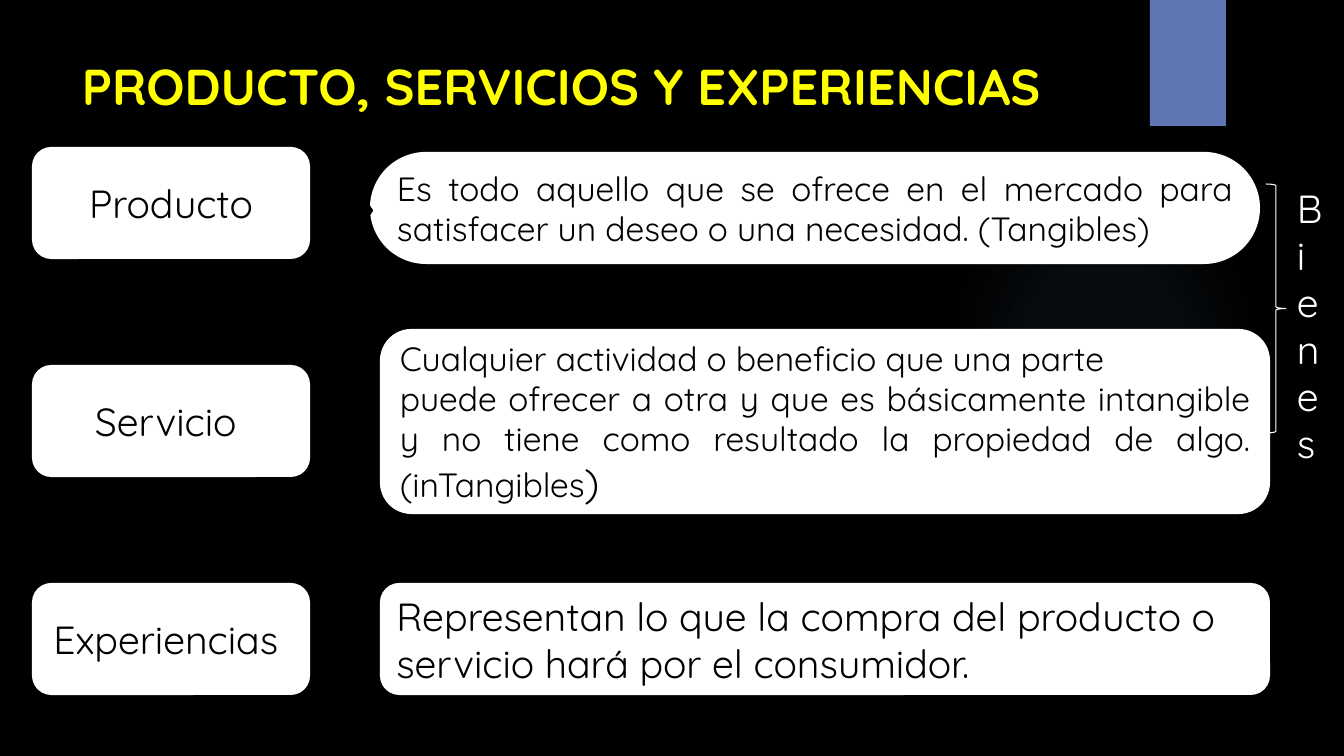
from lxml import etree
from pptx import Presentation
from pptx.dml.color import RGBColor
from pptx.enum.shapes import MSO_SHAPE as SHAPE
from pptx.enum.text import MSO_ANCHOR as ANCHOR, PP_ALIGN as ALIGN
from pptx.oxml.ns import qn
from pptx.util import Pt

WIDTH, HEIGHT = 1344, 756
EMU_PER_PX = 12192000 / WIDTH
BLACK, WHITE, YELLOW, BLUE, GLOW = "000000", "FFFFFF", "FFFF00", "6076B4", "7097D3"


def px(length):
    return round(length * EMU_PER_PX)


def color(code):
    return RGBColor.from_string(code)


class SlideBuilder:
    font = "Quicksand"

    def __init__(self, deck):
        self.page = deck.slides.add_slide(deck.slide_layouts[6])
        background = self.page.background.fill
        background.solid()
        background.fore_color.rgb = color(BLACK)

    def shape(self, kind, frame, fill=None, line=None, weight=1.5, corner=None):
        box = self.page.shapes.add_shape(kind, *map(px, frame))
        box.shadow.inherit = False
        if fill:
            box.fill.solid()
            box.fill.fore_color.rgb = color(fill)
        else:
            box.fill.background()
        if line:
            box.line.color.rgb = color(line)
            box.line.width = Pt(weight)
        else:
            box.line.fill.background()
        if corner is not None:
            box.adjustments[0] = corner
        return box

    def glow(self, frame, code, stops):
        """Draw a circle fading outwards; stops are (position, opacity) in percent."""
        circle = self.shape(SHAPE.OVAL, frame)
        gradient = etree.Element(qn("a:gradFill"), rotWithShape="1")
        stop_list = etree.SubElement(gradient, qn("a:gsLst"))
        for position, opacity in stops:
            stop = etree.SubElement(stop_list, qn("a:gs"), pos=str(position * 1000))
            tint = etree.SubElement(stop, qn("a:srgbClr"), val=code)
            etree.SubElement(tint, qn("a:alpha"), val=str(opacity * 1000))
        radial = etree.SubElement(gradient, qn("a:path"), path="circle")
        center = dict.fromkeys("ltrb", "50000")
        etree.SubElement(radial, qn("a:fillToRect"), center)
        properties = circle.element.spPr
        properties.replace(properties.find(qn("a:noFill")), gradient)

    def fill_text(self, box, paragraphs, anchor=ANCHOR.MIDDLE):
        """Fill a box with (alignment, [(text, format), ...]) paragraphs."""
        frame = box.text_frame
        frame.word_wrap = True
        frame.vertical_anchor = anchor
        for index, (alignment, spans) in enumerate(paragraphs):
            para = frame.add_paragraph() if index else frame.paragraphs[0]
            para.alignment = alignment
            for text, style in spans:
                span = para.add_run()
                span.text = text
                values = {"name": self.font, "size": 28, "bold": False,
                          "color": BLACK} | style
                span.font.color.rgb = color(values.pop("color"))
                values["size"] = Pt(values["size"])
                for name, value in values.items():
                    setattr(span.font, name, value)

    def text(self, frame, text, style):
        box = self.page.shapes.add_textbox(*map(px, frame))
        self.fill_text(box, [(ALIGN.LEFT, [(text, style)])], ANCHOR.TOP)

    def card(self, frame, paragraphs, corner=None):
        box = self.shape(SHAPE.ROUNDED_RECTANGLE, frame, WHITE, WHITE, corner=corner)
        self.fill_text(box, paragraphs)


def main():
    deck = Presentation()
    deck.slide_width, deck.slide_height = px(WIDTH), px(HEIGHT)
    slide = SlideBuilder(deck)

    slide.glow((949, 184, 310, 310), GLOW, [(0, 7), (36, 6), (69, 0)])
    slide.shape(SHAPE.RECTANGLE, (1150, 0, 76, 126), BLUE)
    slide.text((72, 50, 1037, 154), "PRODUCTO, SERVICIOS Y EXPERIENCIAS",
               {"size": 36, "bold": True, "color": YELLOW})

    small = {"size": 24}
    concepts = [
        ("Producto", (371, 153, 888, 110), 0.5, 184, [
            (ALIGN.JUSTIFY, [("Es todo aquello que se ofrece en el mercado para "
                              "satisfacer un deseo o una necesidad. (Tangibles)", small)])]),
        ("Servicio ", (381, 330, 888, 183), None, 394, [
            (ALIGN.LEFT, [("Cualquier actividad o beneficio que una parte", small)]),
            (ALIGN.JUSTIFY, [("puede ofrecer a otra y que es básicamente intangible y no "
                              "tiene como resultado la propiedad de algo. (inTangibles", small),
                             (")", {})])]),
        ("Experiencias ", (381, 584, 888, 110), None, 612, [
            (ALIGN.LEFT, [("Representan lo que la compra del producto o "
                           "servicio hará por el consumidor.", {})])]),
    ]
    for row, (label, frame, corner, arrow_top, definition) in enumerate(concepts):
        slide.card((33, 148 + 218 * row, 276, 110), [(ALIGN.CENTER, [(label, {})])])
        slide.card(frame, definition, corner)
        slide.shape(SHAPE.RIGHT_ARROW, (336, arrow_top, 36, 53), BLACK, BLACK)

    slide.shape(SHAPE.RIGHT_BRACE, (1266, 184, 20, 249), line=WHITE, weight=0.75)
    slide.text((1287, 179, 43, 295), "Bienes", {"color": WHITE})
    deck.save("out.pptx")


if __name__ == "__main__":
    main()
